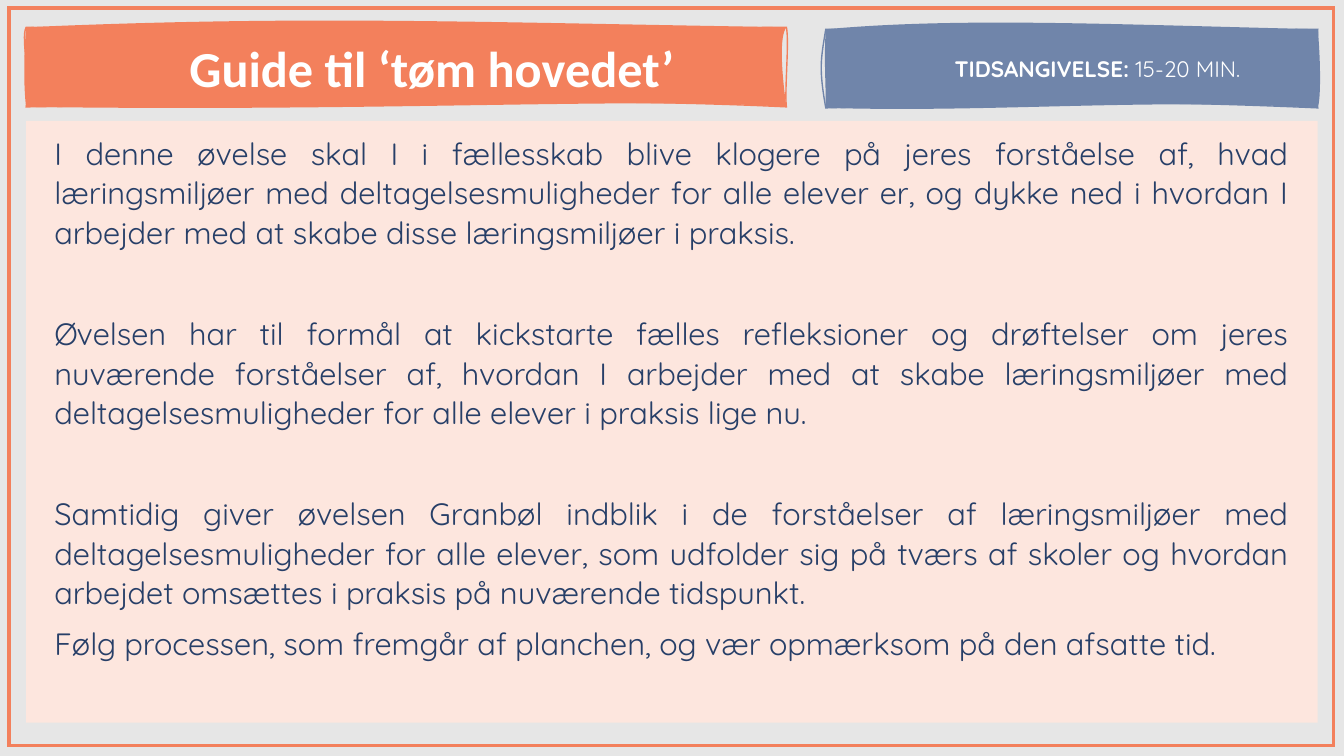
from dataclasses import dataclass

from lxml import etree
from pptx import Presentation
from pptx import util as u
from pptx.dml.color import RGBColor
from pptx.enum import shapes, text
from pptx.oxml.ns import qn


@dataclass(frozen=True)
class Theme:
    background: str = "E6E6E6"
    coral: str = "F3805C"
    blue: str = "7085AA"
    panel: str = "FDE6DE"
    navy: str = "273F68"
    white: str = "FFFFFF"
    heading_font: str = "Calibri"
    body_font: str = "Quicksand"
    title_size: int = 36
    time_size: int = 16
    body_size: int = 22


THEME = Theme()

# Bezier control points per side (top, right, bottom, left), in inches from the banner's corner
TITLE_OUTLINE = [((1.28, 0.04), (6.59, 0.01)), ((7.57, 0.15), (7.52, 0.63)),
                 ((5.49, 0.69), (2.6, 0.75)), ((0.06, 0.53), (-0.06, 0.12))]
TITLE_FILL = [((2.75, -0.12), (4.41, -0.05)), ((7.47, 0.09), (7.49, 0.43)),
              ((6.06, 0.69), (3.67, 0.84)), ((-0.02, 0.67), (-0.03, 0.33))]
TIME_OUTLINE = [((2, 0.04), (3.67, 0.01)), ((4.88, 0.14), (4.81, 0.58)),
                ((2.62, 0.68), (1.47, 0.74)), ((-0.07, 0.39), (-0.05, 0.3))]
TIME_FILL = [((1.32, -0.12), (2.8, -0.05)), ((4.91, 0.35), (4.91, 0.68)),
             ((3.2, 0.68), (1.68, 0.83)), ((0, 0.49), (-0.02, 0.3))]

# Space before each paragraph, in points, and its wording
GUIDE = [
    (0, "I denne øvelse skal I i fællesskab blive klogere på jeres forståelse af, hvad "
        "læringsmiljøer med deltagelsesmuligheder for alle elever er, og dykke ned i hvordan I "
        "arbejder med at skabe disse læringsmiljøer i praksis."),
    (36, "Øvelsen har til formål at kickstarte fælles refleksioner og drøftelser om jeres "
         "nuværende forståelser af, hvordan I arbejder med at skabe læringsmiljøer med "
         "deltagelsesmuligheder for alle elever i praksis lige nu."),
    (36, "Samtidig giver øvelsen Granbøl indblik i de forståelser af læringsmiljøer med "
         "deltagelsesmuligheder for alle elever, som udfolder sig på tværs af skoler og hvordan "
         "arbejdet omsættes i praksis på nuværende tidspunkt."),
    (0, "Følg processen, som fremgår af planchen, og vær opmærksom på den afsatte tid."),
]


def apply(target, values):
    for name, value in values.items():
        setattr(target, name, value)


def paint(shape, fill=None, line=None, line_width=1):
    shape.shadow.inherit = False
    if fill:
        shape.fill.solid()
        shape.fill.fore_color.rgb = RGBColor.from_string(fill)
    else:
        shape.fill.background()
    if line:
        shape.line.color.rgb = RGBColor.from_string(line)
        shape.line.width = u.Pt(line_width)
        etree.SubElement(shape.line._get_or_add_ln(), qn("a:miter"), lim="800000")
    else:
        shape.line.fill.background()


def place(shape, box):
    sides = ("left", "top", "width", "height")
    apply(shape, {side: u.Inches(value) for side, value in zip(sides, box)})


def set_frame(shape, anchor, left_inset):
    apply(shape.text_frame, {
        "word_wrap": True, "auto_size": text.MSO_AUTO_SIZE.NONE, "vertical_anchor": anchor,
        "margin_left": u.Inches(left_inset), "margin_right": u.Inches(0.08),
        "margin_top": u.Inches(0.04), "margin_bottom": u.Inches(0.04)})


def add_run(paragraph, wording, font, size, color, bold=False):
    run = paragraph.add_run()
    run.text = wording
    apply(run.font, {"name": font, "size": u.Pt(size), "bold": bold})
    run.font.color.rgb = RGBColor.from_string(color)


def add_panel(slide, box, **colors):
    panel = slide.shapes.add_shape(shapes.MSO_SHAPE.RECTANGLE, *map(u.Inches, box))
    paint(panel, **colors)


def add_curves(path_list, corners, controls, **options):
    """Closed path of one Bezier curve per side."""
    size = {"w": str(u.Inches(corners[2][0])), "h": str(u.Inches(corners[2][1]))}
    outline = etree.SubElement(path_list, qn("a:path"), **size, **options)

    def add_step(tag, points):
        step = etree.SubElement(outline, qn(tag))
        for x, y in points:
            etree.SubElement(step, qn("a:pt"), x=str(u.Inches(x)), y=str(u.Inches(y)))

    add_step("a:moveTo", corners[:1])
    for side, handles in enumerate(controls):
        add_step("a:cubicBezTo", [*handles, corners[(side + 1) % 4]])
    add_step("a:close", [])


def add_brush(slide, box, color, outline, fill):
    """Freeform with a loose outline beside its filled area."""
    left, top, width, height = box
    corners = [(0, 0), (width, 0), (width, height), (0, height)]
    points = [(u.Inches(left + x), u.Inches(top + y)) for x, y in corners]
    builder = slide.shapes.build_freeform(*points[0])
    builder.add_line_segments(points[1:], close=True)
    brush = builder.convert_to_shape()
    path_list = brush.element.find(".//" + qn("a:pathLst"))
    for straight in list(path_list):
        path_list.remove(straight)
    add_curves(path_list, corners, outline, fill="none")
    add_curves(path_list, corners, fill, stroke="0")
    paint(brush, fill=color, line=color)
    return brush


def write_banner(holder, runs):
    set_frame(holder, text.MSO_ANCHOR.MIDDLE, 0.59)
    paragraph = holder.text_frame.paragraphs[0]
    paragraph.alignment = text.PP_ALIGN.CENTER
    for wording, font, size, bold in runs:
        add_run(paragraph, wording, font, size, THEME.white, bold)


def bring_to_front(shape):
    shape.element.getparent().append(shape.element)


def add_title_banner(slide, box):
    add_brush(slide, box, THEME.coral, TITLE_OUTLINE, TITLE_FILL)
    title = slide.shapes.title
    place(title, box)
    write_banner(title, [("Guide til ‘tøm hovedet’", THEME.heading_font, THEME.title_size, True)])
    bring_to_front(title)


def add_time_banner(slide, box):
    brush = add_brush(slide, box, THEME.blue, TIME_OUTLINE, TIME_FILL)
    write_banner(brush, [("TIDSANGIVELSE:", THEME.body_font, THEME.time_size, True),
                         (" 15-20 MIN.", THEME.body_font, THEME.time_size, False)])


def add_guide(slide, box):
    """Panel with the justified instructions."""
    left, top, width, height = box
    add_panel(slide, box, fill=THEME.panel)
    body = slide.placeholders[1]
    place(body, (left + 0.2, top + 0.07, width - 0.41, height - 0.2))
    set_frame(body, text.MSO_ANCHOR.TOP, 0.08)
    frame = body.text_frame
    for index, (space_before, wording) in enumerate(GUIDE):
        paragraph = frame.paragraphs[0] if index == 0 else frame.add_paragraph()
        properties = paragraph._p.get_or_add_pPr()
        apply_indent = {"marL": "0", "indent": "0"}
        for name, value in apply_indent.items():
            properties.set(name, value)
        etree.SubElement(properties, qn("a:buNone"))
        apply(paragraph, {"alignment": text.PP_ALIGN.JUSTIFY, "line_spacing": 1.07,
                          "space_before": u.Pt(space_before), "space_after": u.Pt(8)})
        add_run(paragraph, wording, THEME.body_font, THEME.body_size, THEME.navy)
    bring_to_front(body)


def build_guide_slide(presentation):
    slide = presentation.slides.add_slide(presentation.slide_layouts[1])
    slide.background.fill.solid()
    slide.background.fill.fore_color.rgb = RGBColor.from_string(THEME.background)

    # Frame
    add_panel(slide, (0.09, 0.08, 13.14, 7.32), line=THEME.coral, line_width=2.25)

    # Title and time banners
    add_title_banner(slide, (0.26, 0.27, 7.54, 0.79))
    add_time_banner(slide, (8.19, 0.29, 4.88, 0.78))

    # Instructions
    add_guide(slide, (0.26, 1.2, 12.81, 5.97))


def main():
    presentation = Presentation()
    presentation.slide_width = u.Inches(13.33)
    presentation.slide_height = u.Inches(7.5)
    build_guide_slide(presentation)
    presentation.save("out.pptx")


if __name__ == "__main__":
    main()
